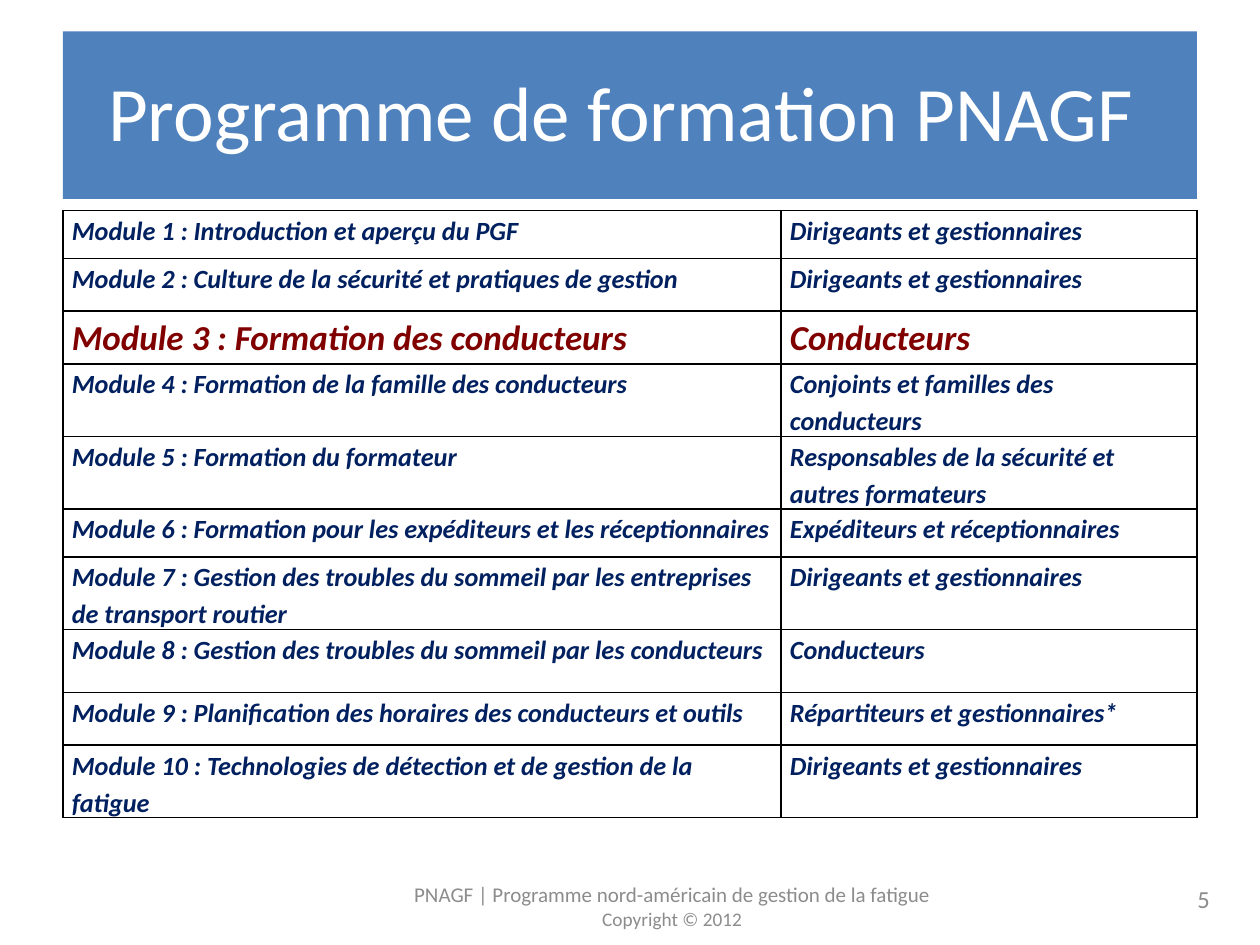
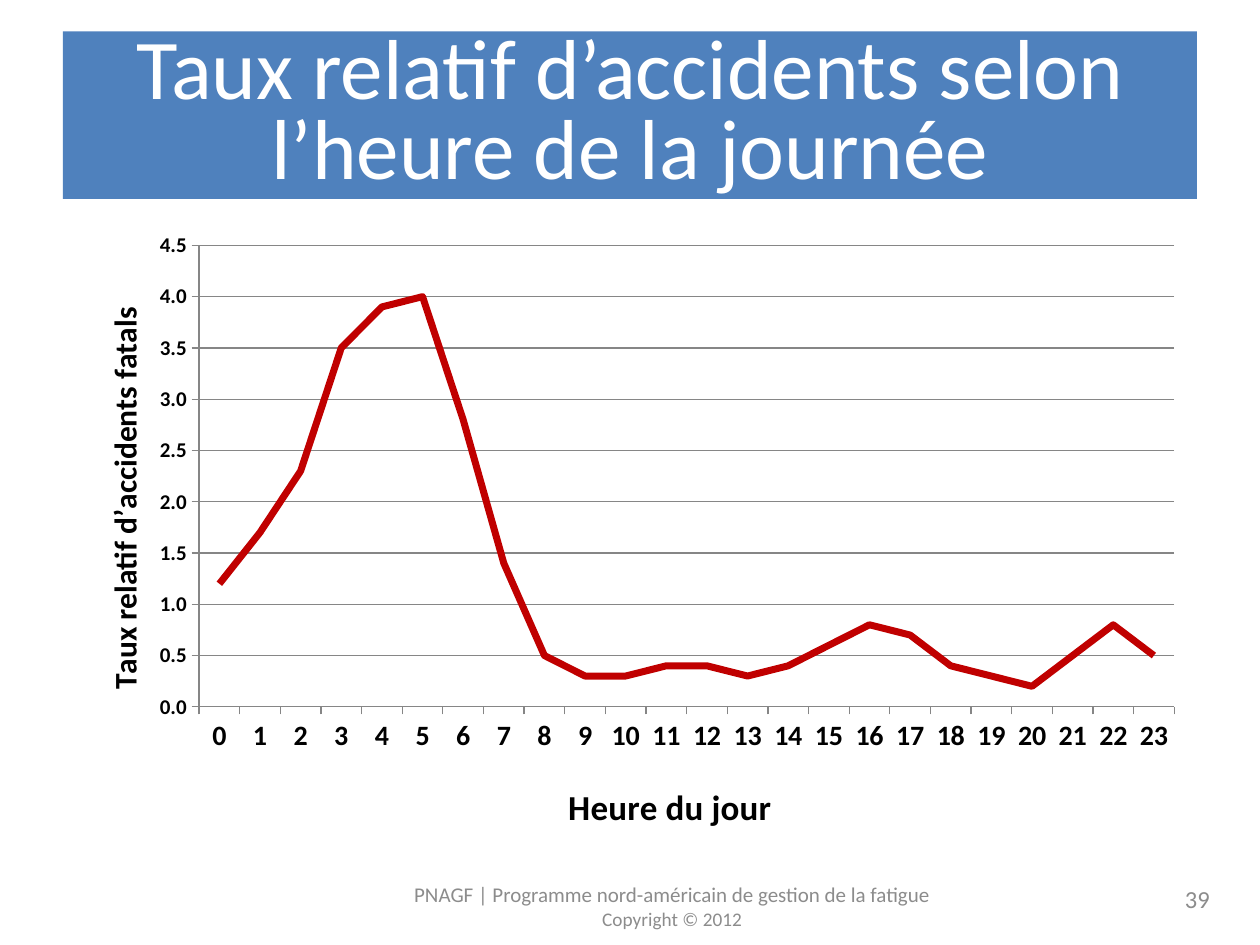
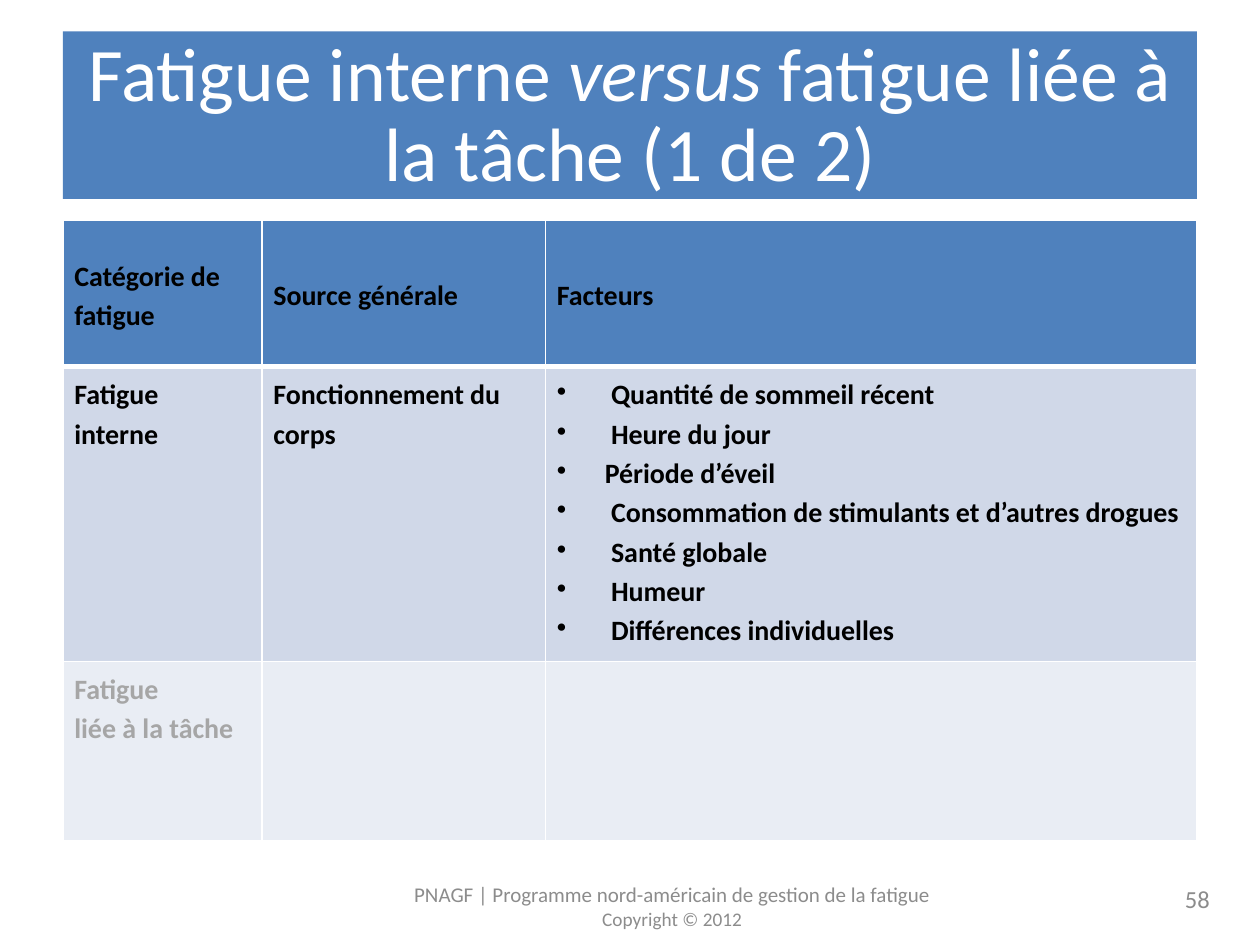
from pptx import Presentation
from pptx.chart.data import CategoryChartData
from pptx.dml.color import RGBColor
from pptx.enum.chart import XL_CHART_TYPE, XL_MARKER_STYLE, XL_TICK_MARK
from pptx.enum.shapes import MSO_SHAPE
from pptx.enum.text import MSO_ANCHOR, MSO_AUTO_SIZE, PP_ALIGN
from pptx.oxml import parse_xml
from pptx.oxml.ns import nsdecls, qn
from pptx.util import Inches, Pt

RECT = MSO_SHAPE.RECTANGLE
MIDDLE, TOP = MSO_ANCHOR.MIDDLE, MSO_ANCHOR.TOP
CENTER, RIGHT = PP_ALIGN.CENTER, PP_ALIGN.RIGHT
LINE, NO_MARK = XL_CHART_TYPE.LINE, XL_MARKER_STYLE.NONE
OUTSIDE = XL_TICK_MARK.OUTSIDE
FONT = "Calibri"
BLUE, NAVY, MAROON, RED = "4F81BD", "002060", "800000", "C00000"
BLACK, WHITE, GREY, PALE, AXIS = "000000", "FFFFFF", "8C8C8C", "A6A6A6", "868686"
rgb = RGBColor.from_string


def write(par, text, size, color, bold=False, italic=False):
    run = par.add_run()
    run.text = text
    font = run.font
    font.name, font.size = FONT, Pt(size)
    font.bold, font.italic = bold, italic
    font.color.rgb = rgb(color)


def frame(cell, color, top=1, bottom=1):
    """Draw the four borders of a cell; they must precede its fill."""
    props = cell._tc.get_or_add_tcPr()
    sides = (("L", 1), ("R", 1), ("T", top), ("B", bottom))
    for place, (side, width) in enumerate(sides):
        props.insert(place, parse_xml(
            f'<a:ln{side} {nsdecls("a")} w="{Pt(width)}"><a:solidFill>'
            f'<a:srgbClr val="{color}"/></a:solidFill></a:ln{side}>'))


prs = Presentation()
prs.slide_width, prs.slide_height = Inches(10), Inches(7.5)

# Shared band, title, footer and page number
heads = [
    ("5", 44, [("Programme de formation PNAGF ", False)]),
    ("39", 48.6, [("Taux relatif d’accidents selon l’heure de la journée", False)]),
    ("58", 43.2, [("Fatigue interne ", False), ("versus", True),
                  (" fatigue liée à la tâche (1 de 2)", False)]),
]
slides = []
for page, size, parts in heads:
    slide = prs.slides.add_slide(prs.slide_layouts[5])
    slides.append(slide)
    title = slide.shapes.title
    title.left, title.top = Inches(0.5), Inches(0.3)
    title.width, title.height = Inches(9), Inches(1.25)
    text = title.text_frame
    text.auto_size = MSO_AUTO_SIZE.NONE
    text.vertical_anchor = MIDDLE
    par = text.paragraphs[0]
    par.alignment, par.line_spacing = CENTER, Pt(45.8)
    for words, italic in parts:
        write(par, words, size, WHITE, italic=italic)

    band = slide.shapes.add_shape(RECT, Inches(0.5), Inches(0.25), Inches(9), Inches(1.33))
    band.shadow.inherit = False
    band.fill.solid()
    band.fill.fore_color.rgb = rgb(BLUE)
    band.line.fill.background()
    title.element.addprevious(band.element)

    notes = [
        (3, 7, 4.67, 0.38, CENTER,
         [("PNAGF | Programme nord-américain de gestion de la fatigue", 12),
          ("Copyright © 2012", 11)]),
        (7.37, 6.93, 2.33, 0.4, RIGHT, [(page, 14)]),
    ]
    for left, top, width, height, align, lines in notes:
        box = slide.shapes.add_textbox(Inches(left), Inches(top), Inches(width), Inches(height))
        text = box.text_frame
        text.word_wrap = True
        text.vertical_anchor = MIDDLE
        for i, (words, pts) in enumerate(lines):
            par = text.add_paragraph() if i else text.paragraphs[0]
            par.alignment = align
            write(par, words, pts, GREY)

# Slide 1: training modules and their audiences
heads_up = "Dirigeants et gestionnaires"
modules = [
    ("Introduction et aperçu du PGF", heads_up, 0.38),
    ("Culture de la sécurité et pratiques de gestion", heads_up, 0.42),
    ("Formation des conducteurs", "Conducteurs", 0.42),
    ("Formation de la famille des conducteurs", "Conjoints et familles des conducteurs", 0.42),
    ("Formation du formateur", "Responsables de la sécurité et autres formateurs", 0.5),
    ("Formation pour les expéditeurs et les réceptionnaires",
     "Expéditeurs et réceptionnaires", 0.38),
    ("Gestion des troubles du sommeil par les entreprises de transport routier", heads_up, 0.5),
    ("Gestion des troubles du sommeil par les conducteurs", "Conducteurs", 0.5),
    ("Planification des horaires des conducteurs et outils",
     "Répartiteurs et gestionnaires*", 0.42),
    ("Technologies de détection et de gestion de la fatigue", heads_up, 0.42),
]
high = sum(height for _, _, height in modules)
table = slides[0].shapes.add_table(
    len(modules), 2, Inches(0.5), Inches(1.67), Inches(9), Inches(high)).table
table.first_row = table.horz_banding = False
table.columns[0].width, table.columns[1].width = Inches(5.7), Inches(3.3)
for row, (name, group, height) in enumerate(modules):
    table.rows[row].height = Inches(height)
    size, color = (20, MAROON) if row == 2 else (15, NAVY)
    for col, words in enumerate((f"Module {row + 1} : {name}", group)):
        cell = table.cell(row, col)
        cell.margin_left = cell.margin_right = Inches(0.07)
        cell.margin_top = cell.margin_bottom = 0
        cell.fill.background()
        frame(cell, BLACK)
        par = cell.text_frame.paragraphs[0]
        par.line_spacing = 1.15
        write(par, words, size, color, bold=True, italic=True)

# Slide 2: accident rate by hour
data = CategoryChartData(number_format="0.0")
data.categories = [str(hour) for hour in range(24)]
data.add_series("Series 1", (
    1.2, 1.7, 2.3, 3.5, 3.9, 4, 2.8, 1.4, 0.5, 0.3, 0.3, 0.4,
    0.4, 0.3, 0.4, 0.6, 0.8, 0.7, 0.4, 0.3, 0.2, 0.5, 0.8, 0.5))
chart = slides[1].shapes.add_chart(
    LINE, Inches(0.5), Inches(1.75), Inches(9), Inches(4.95), data).chart
chart.has_legend = chart.has_title = False
chart.font.name, chart.font.size = FONT, Pt(10)
chart.font.color.rgb = rgb(BLACK)
plot = chart.plots[0]
plot.vary_by_categories = False
rate = plot.series[0]
rate.smooth = False
rate.marker.style = NO_MARK
rate.format.line.color.rgb = rgb(RED)
rate.format.line.width = Pt(4)

hours, rates = chart.category_axis, chart.value_axis
axes = [(hours, "Heure du jour", 20, 16), (rates, "Taux relatif d’accidents fatals", 18, 12)]
for axis, words, large, small in axes:
    write(axis.axis_title.text_frame.paragraphs[0], words, large, BLACK, bold=True)
    font = axis.tick_labels.font
    font.name, font.size, font.bold = FONT, Pt(small), True
    font.color.rgb = rgb(BLACK)
    axis.major_tick_mark = OUTSIDE
    axis.format.line.color.rgb = rgb(AXIS)
hours.has_major_gridlines = False
rates.has_major_gridlines = True
rates.major_gridlines.format.line.color.rgb = rgb(AXIS)
rates.minimum_scale, rates.maximum_scale, rates.major_unit = 0, 4.5, 0.5
rates.tick_labels.number_format = "0.0"
rates.tick_labels.number_format_is_linked = False

# Places of plot and axis titles, as shares of the chart
area = chart._chartSpace.find(".//" + qn("c:plotArea"))
spots = [
    (area, 0, {"x": 0.12, "y": 0.04, "w": 0.86, "h": 0.74}),
    (hours.axis_title._element, 1, {"x": 0.44, "y": 0.89}),
    (rates.axis_title._element, 1, {"x": 0.03, "y": 0.13}),
]
for item, place, shares in spots:
    for old in item.findall(qn("c:layout")):
        item.remove(old)
    inner = '<c:layoutTarget val="inner"/>' if "w" in shares else ""
    modes = "".join(f'<c:{key}Mode val="edge"/>' for key in "xy")
    sizes = "".join(f'<c:{key} val="{share}"/>' for key, share in shares.items())
    item.insert(place, parse_xml(
        f'<c:layout {nsdecls("c")}><c:manualLayout>{inner}{modes}{sizes}'
        '</c:manualLayout></c:layout>'))

# Slide 3: kinds of fatigue
factors = [
    " Quantité de sommeil récent", " Heure du jour", "Période d’éveil",
    " Consommation de stimulants et d’autres drogues", " Santé globale",
    " Humeur", " Différences individuelles",
]
rows = [
    (1.16, BLUE, BLACK, MIDDLE, [["Catégorie de fatigue"], ["Source générale"], ["Facteurs"]]),
    (2.34, "D0D8E8", BLACK, TOP, [["Fatigue", "interne"], ["Fonctionnement du corps"], factors]),
    (1.42, "E9EDF4", PALE, TOP, [["Fatigue", "liée à la tâche"], [], []]),
]
table = slides[2].shapes.add_table(
    3, 3, Inches(0.5), Inches(1.75), Inches(9), Inches(4.92)).table
table.horz_banding = False
for col, width in enumerate((1.58, 2.25, 5.17)):
    table.columns[col].width = Inches(width)
for row, (height, fill, color, anchor, cells) in enumerate(rows):
    table.rows[row].height = Inches(height)
    for col, lines in enumerate(cells):
        cell = table.cell(row, col)
        cell.vertical_anchor = anchor
        cell.margin_left = cell.margin_right = Inches(0.09)
        cell.margin_top = cell.margin_bottom = Inches(0.05)
        cell.fill.solid()
        cell.fill.fore_color.rgb = rgb(fill)
        frame(cell, WHITE, top=3 if row == 1 else 1, bottom=3 if row == 0 else 1)
        text = cell.text_frame
        for i, words in enumerate(lines):
            par = text.add_paragraph() if i else text.paragraphs[0]
            par.line_spacing = 1.15
            if lines is factors:
                props = par._p.get_or_add_pPr()
                props.set("marL", str(Inches(0.38)))
                props.set("indent", str(-Inches(0.38)))
                props.append(parse_xml(f'<a:buChar {nsdecls("a")} char="•"/>'))
            write(par, words, 16, color, bold=True)

prs.save("out.pptx")
